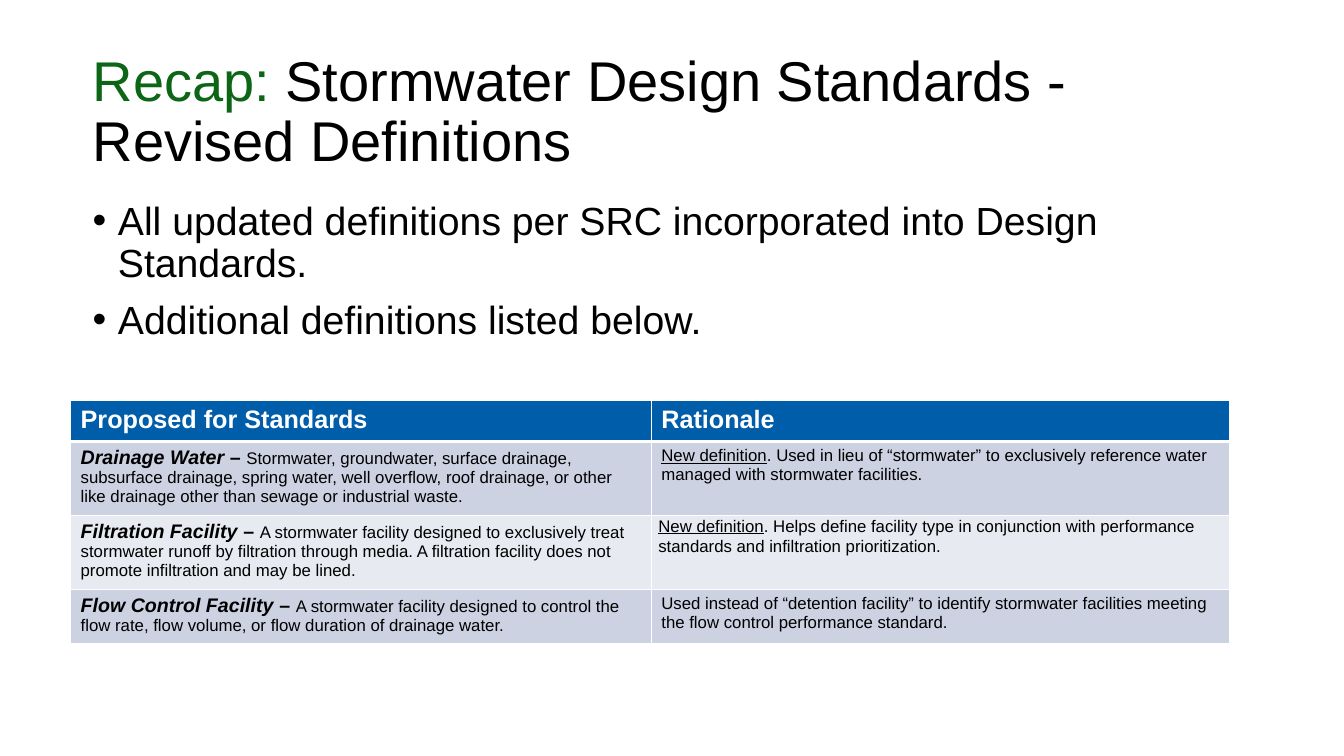
from dataclasses import dataclass

from lxml import etree
from pptx import Presentation
from pptx.dml.color import RGBColor
from pptx.enum.text import MSO_ANCHOR
from pptx.oxml.ns import qn
from pptx.util import Inches, Pt

TOP, MIDDLE = MSO_ANCHOR.TOP, MSO_ANCHOR.MIDDLE


@dataclass(frozen=True)
class Theme:
    font: str = "Arial"
    ink: str = "000000"
    green: str = "0C6616"
    white: str = "FFFFFF"
    blue: str = "005DAA"
    bands: tuple = ("CCD2E2", "E7EAF1")
    title: int = 40
    body: int = 28
    head: int = 18
    term: int = 14
    cell: int = 12


THEME = Theme()

BULLETS = [
    "All updated definitions per SRC incorporated into Design Standards.",
    "Additional definitions listed below.",
]
HEADS = ["Proposed for Standards", "Rationale"]
# Term, meaning, underlined lead, rationale
ROWS = [
    ("Drainage Water",
     "Stormwater, groundwater, surface drainage, subsurface drainage, spring "
     "water, well overflow, roof drainage, or other like drainage other than "
     "sewage or industrial waste.",
     "New definition",
     ". Used in lieu of “stormwater” to exclusively reference water managed "
     "with stormwater facilities."),
    ("Filtration Facility",
     "A stormwater facility designed to exclusively treat stormwater runoff by "
     "filtration through media. A filtration facility does not promote "
     "infiltration and may be lined.",
     "New definition",
     ". Helps define facility type in conjunction with performance standards "
     "and infiltration prioritization."),
    ("Flow Control Facility",
     "A stormwater facility designed to control the flow rate, flow volume, or "
     "flow duration of drainage water.",
     "",
     "Used instead of “detention facility” to identify stormwater facilities "
     "meeting the flow control performance standard."),
]
WIDTHS = [5.76, 5.74]
HEIGHTS = [0.41, 0.69, 0.69, 0.54]


def set_font(para, size, color=THEME.ink):
    para.font.name = THEME.font
    para.font.size = Pt(size)
    para.font.color.rgb = RGBColor.from_string(color)


def add_run(para, text):
    run = para.add_run()
    run.text = text
    return run


def add_box(slide, top, height, anchor):
    box = slide.shapes.add_textbox(
        Inches(0.92), Inches(top), Inches(11.5), Inches(height))
    frame = box.text_frame
    frame.word_wrap = True
    frame.vertical_anchor = anchor
    frame.margin_left = frame.margin_right = 0
    frame.margin_top = frame.margin_bottom = 0
    return frame


def add_title(slide):
    para = add_box(slide, 0.4, 1.45, MIDDLE).paragraphs[0]
    set_font(para, THEME.title)
    para.line_spacing = 0.9
    lead = add_run(para, "Recap: ")
    lead.font.color.rgb = RGBColor.from_string(THEME.green)
    add_run(para, "Stormwater Design Standards - Revised Definitions")


def add_bullets(slide):
    frame = add_box(slide, 2, 1.75, TOP)
    for i, text in enumerate(BULLETS):
        para = frame.add_paragraph() if i else frame.paragraphs[0]
        para.line_spacing = 0.9
        para.space_before = Pt(10)
        props = para._p.get_or_add_pPr()
        props.set("marL", str(Inches(0.25)))
        props.set("indent", str(Inches(-0.25)))
        etree.SubElement(props, qn("a:buFont"), typeface=THEME.font)
        etree.SubElement(props, qn("a:buChar"), char="•")
        set_font(para, THEME.body)
        add_run(para, text)


def style_cell(cell, fill, base=1):
    """Fill the cell and rule it in white; base is the bottom line in points."""
    cell.fill.solid()
    cell.fill.fore_color.rgb = RGBColor.from_string(fill)
    props = cell._tc.get_or_add_tcPr()
    for i, side in enumerate("LRTB"):
        width = base if side == "B" else 1
        line = etree.Element(qn(f"a:ln{side}"), w=str(Pt(width)))
        paint = etree.SubElement(line, qn("a:solidFill"))
        etree.SubElement(paint, qn("a:srgbClr"), val=THEME.white)
        props.insert(i, line)


def fill_term(cell, term, text):
    para = cell.text_frame.paragraphs[0]
    set_font(para, THEME.cell)
    name, dash = add_run(para, f"{term} "), add_run(para, "– ")
    for run in (name, dash):
        run.font.size = Pt(THEME.term)
        run.font.bold = True
    name.font.italic = True
    add_run(para, text)


def fill_reason(cell, lead, text):
    para = cell.text_frame.paragraphs[0]
    set_font(para, THEME.cell)
    if lead:
        add_run(para, lead).font.underline = True
    add_run(para, text)


def space_reason(cell):
    cell.margin_left = cell.margin_right = Inches(0.07)
    cell.margin_top = cell.margin_bottom = 0
    para = cell.text_frame.paragraphs[0]
    para.line_spacing = 1.07
    para.space_before = para.space_after = Pt(6)


def add_grid(slide):
    grid = slide.shapes.add_table(
        len(HEIGHTS), len(WIDTHS), Inches(0.7), Inches(3.97),
        Inches(sum(WIDTHS)), Inches(sum(HEIGHTS))).table
    for col, width in zip(grid.columns, WIDTHS):
        col.width = Inches(width)
    for row, height in zip(grid.rows, HEIGHTS):
        row.height = Inches(height)
    for i, text in enumerate(HEADS):
        cell = grid.cell(0, i)
        style_cell(cell, THEME.blue, base=3)
        para = cell.text_frame.paragraphs[0]
        set_font(para, THEME.head, THEME.white)
        para.font.bold = True
        add_run(para, text)
    for i, (term, text, lead, reason) in enumerate(ROWS):
        left, right = grid.cell(i + 1, 0), grid.cell(i + 1, 1)
        for cell in (left, right):
            style_cell(cell, THEME.bands[i % 2])
        fill_term(left, term, text)
        fill_reason(right, lead, reason)
    space_reason(grid.cell(2, 1))


def main():
    deck = Presentation()
    deck.slide_width, deck.slide_height = Inches(13.33), Inches(7.5)
    slide = deck.slides.add_slide(deck.slide_layouts[6])
    add_title(slide)
    add_grid(slide)
    add_bullets(slide)
    deck.save("out.pptx")


if __name__ == "__main__":
    main()
